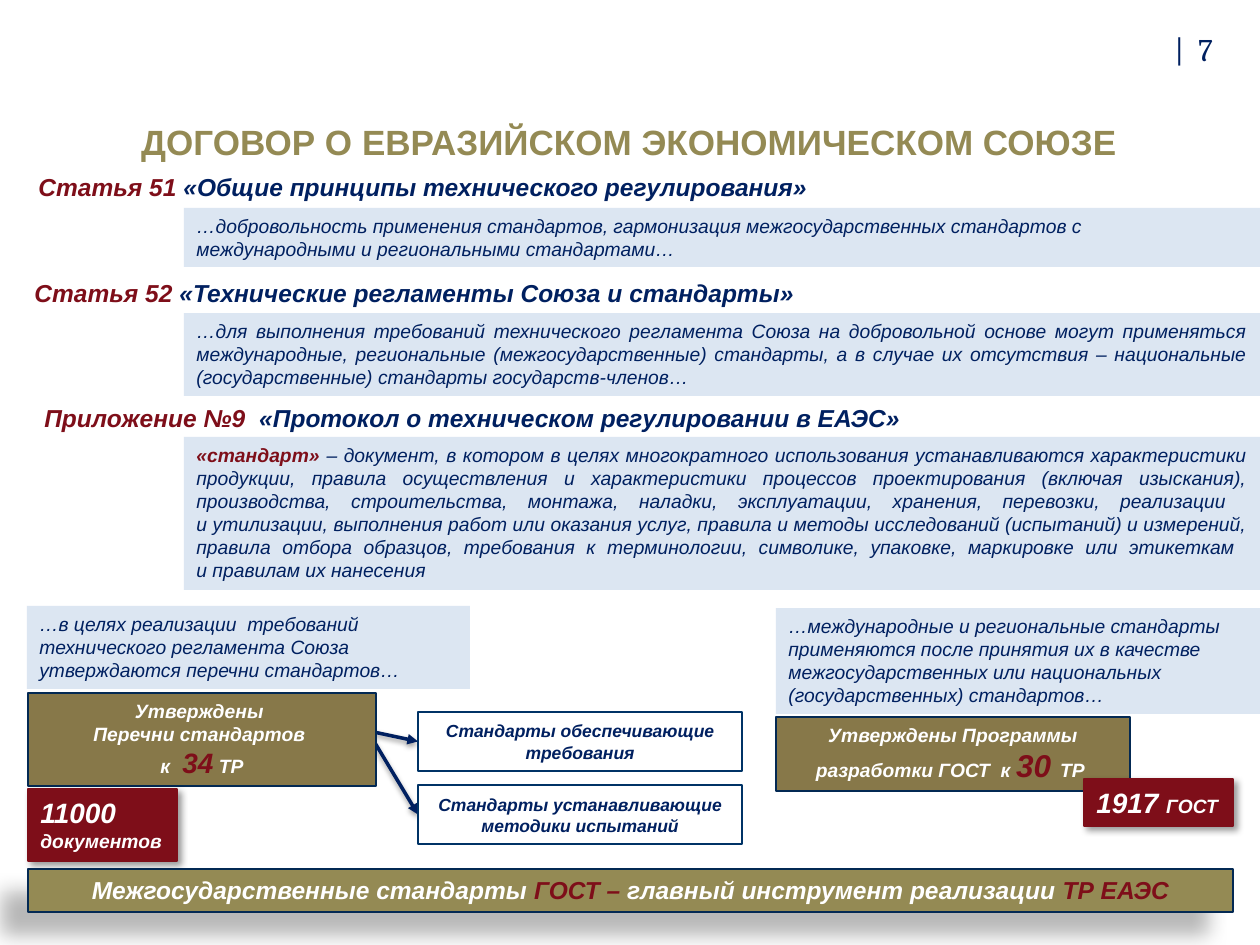
from typing import NamedTuple, Optional

from lxml.etree import SubElement
from pptx import Presentation
from pptx.dml.color import RGBColor
from pptx.enum.shapes import MSO_CONNECTOR, MSO_SHAPE
from pptx.enum.text import MSO_ANCHOR, MSO_AUTO_SIZE, PP_ALIGN
from pptx.oxml.ns import qn
from pptx.util import Pt

EMU_PER_INCH = 914400
PX_PER_INCH = 126
TITLE_ONLY = 5
LEFT_SIDE = 1
COLORS = {
    "navy": "002060",
    "wine": "7E0E19",
    "white": "FFFFFF",
    "pale": "DCE6F2",
    "olive": "877849",
    "khaki": "948A54",
    "edge": "032953",
    "frame": "003366",
    "black": "000000",
}


class Run(NamedTuple):
    text: str
    size: int = 11
    color: str = "navy"
    bold: bool = False
    italic: bool = True
    font: str = "Arial"


class Shadow(NamedTuple):
    opacity: int
    blur: float
    distance: float
    angle: int


class Box(NamedTuple):
    left: int
    top: int
    width: int
    height: int
    runs: list[Run]
    fill: Optional[str] = None
    line: Optional[str] = None
    line_width: float = 0.75
    align: PP_ALIGN = PP_ALIGN.LEFT
    anchor: MSO_ANCHOR = MSO_ANCHOR.TOP
    shadow: Optional[Shadow] = None


def px(value: int) -> int:
    return round(value * EMU_PER_INCH / PX_PER_INCH)


def rgb(name: str) -> RGBColor:
    return RGBColor.from_string(COLORS[name])


def add_shadow(shape, shadow: Shadow) -> None:
    properties = shape._element.spPr
    effects = properties.find(qn("a:effectLst"))
    if effects is None:
        effects = SubElement(properties, qn("a:effectLst"))
    outer = SubElement(
        effects, qn("a:outerShdw"), blurRad=str(Pt(shadow.blur)), dist=str(Pt(shadow.distance)),
        dir=str(shadow.angle * 60000), algn="tl", rotWithShape="0")
    color = SubElement(outer, qn("a:srgbClr"), val=COLORS["black"])
    SubElement(color, qn("a:alpha"), val=str(shadow.opacity * 1000))


def write_text(shape, box: Box) -> None:
    """Fill the shape with one paragraph; a newline in a run becomes a line break."""
    frame = shape.text_frame
    frame.word_wrap = True
    frame.auto_size = MSO_AUTO_SIZE.NONE
    frame.vertical_anchor = box.anchor
    paragraph = frame.paragraphs[0]
    paragraph.alignment = box.align
    for part in box.runs:
        for index, text in enumerate(part.text.split("\n")):
            if index:
                paragraph.add_line_break()
            run = paragraph.add_run()
            run.text = text
            font = run.font
            font.name, font.size = part.font, Pt(part.size)
            font.bold, font.italic = part.bold, part.italic
            font.color.rgb = rgb(part.color)


def add_box(slide, box: Box):
    bounds = [px(value) for value in box[:4]]
    if box.fill is None:
        shape = slide.shapes.add_textbox(*bounds)
    else:
        shape = slide.shapes.add_shape(MSO_SHAPE.RECTANGLE, *bounds)
        shape.shadow.inherit = False
        shape.fill.solid()
        shape.fill.fore_color.rgb = rgb(box.fill)
        if box.line is None:
            shape.line.fill.background()
        else:
            shape.line.color.rgb = rgb(box.line)
            shape.line.width = Pt(box.line_width)
        if box.shadow:
            add_shadow(shape, box.shadow)
    write_text(shape, box)
    return shape


def add_arrow(slide, start: tuple[int, int], end: tuple[int, int]):
    arrow = slide.shapes.add_connector(
        MSO_CONNECTOR.STRAIGHT, *[px(value) for value in start + end])
    arrow.line.color.rgb = rgb("navy")
    arrow.line.width = Pt(2)
    SubElement(arrow.line._get_or_add_ln(), qn("a:tailEnd"), type="triangle")
    add_shadow(arrow, Shadow(38, 3.1, 1.6, 90))
    return arrow


def heading(left: int, top: int, label: str, name: str) -> Box:
    return Box(left, top, 1172, 42, [Run(label, 14, "wine", True), Run(name, 14, bold=True)])


def quote(left: int, top: int, width: int, height: int, runs: list[Run],
          align: PP_ALIGN = PP_ALIGN.LEFT) -> Box:
    return Box(left, top, width, height, runs, "pale", align=align)


def approval(left: int, top: int, width: int, height: int, runs: list[Run],
             anchor: MSO_ANCHOR = MSO_ANCHOR.TOP) -> Box:
    return Box(left, top, width, height, runs, "olive", "edge",
               align=PP_ALIGN.CENTER, anchor=anchor)


def counter(left: int, top: int, height: int, number: str, unit: str) -> Box:
    return Box(left, top, 149, height,
               [Run(number, 16, "white", True), Run(unit, 11, "white", True)],
               "wine", "wine", shadow=Shadow(40, 4, 3, 45))


QUOTE_LEFT, QUOTE_WIDTH = 184, 1076
TITLE = Box(26, 103, 1206, 77,
            [Run("ДОГОВОР О ЕВРАЗИЙСКОМ ЭКОНОМИЧЕСКОМ СОЮЗЕ", 20, "khaki", True, False)],
            align=PP_ALIGN.CENTER, anchor=MSO_ANCHOR.MIDDLE)
BOXES = [
    Box(1162, 24, 84, 53, [Run("|  7", 18, italic=False, font="Cambria")]),
    heading(26, 166, "Статья 51 ", "«Общие принципы технического регулирования»"),
    quote(QUOTE_LEFT, 208, QUOTE_WIDTH, 59, [Run(
        "…добровольность применения стандартов, гармонизация межгосударственных "
        "стандартов с международными и региональными стандартами…")]),
    heading(22, 272, "Статья 52 ", "«Технические регламенты Союза и стандарты»"),
    quote(QUOTE_LEFT, 313, QUOTE_WIDTH, 83, [Run(
        "…для выполнения требований технического регламента Союза на добровольной основе "
        "могут применяться международные, региональные (межгосударственные) стандарты, "
        "а в случае их отсутствия – национальные (государственные) стандарты "
        "государств-членов…")], PP_ALIGN.JUSTIFY),
    heading(32, 397, "Приложение №9  ", "«Протокол о техническом регулировании в ЕАЭС»"),
    quote(QUOTE_LEFT, 437, QUOTE_WIDTH, 153, [Run("«стандарт» ", 11, "wine", True), Run(
        "– документ, в котором в целях многократного использования устанавливаются "
        "характеристики продукции, правила осуществления и характеристики процессов "
        "проектирования (включая изыскания), производства, строительства, монтажа, наладки, "
        "эксплуатации, хранения, перевозки, реализации \nи утилизации, выполнения работ или "
        "оказания услуг, правила и методы исследований (испытаний) и измерений, правила отбора "
        "образцов, требования к терминологии, символике, упаковке, маркировке или этикеткам \n"
        "и правилам их нанесения")], PP_ALIGN.JUSTIFY),
    quote(27, 606, 443, 83, [Run(
        "…в целях реализации  требований технического регламента Союза "
        "утверждаются перечни стандартов…")]),
    quote(776, 608, 484, 106, [Run(
        "…международные и региональные стандарты применяются после принятия их в качестве "
        "межгосударственных или национальных (государственных) стандартов…")]),
    approval(28, 693, 348, 93, [
        Run("Утверждены \nПеречни стандартов \nк ", 11, "white", True),
        Run(" ", 14, "wine", True), Run("34", 16, "wine", True),
        Run(" ТР", 11, "white", True)], MSO_ANCHOR.MIDDLE),
    approval(776, 717, 354, 74, [
        Run("Утверждены Программы\nразработки ГОСТ  к ", 11, "white", True),
        Run("30 ", 18, "wine", True), Run("ТР ", 11, "white", True)]),
    counter(28, 789, 72, "11000 ", "документов"),
    counter(1084, 779, 47, "1917 ", "ГОСТ"),
    Box(28, 869, 1205, 43, [
        Run("Межгосударственные стандарты ", 14, "white", True),
        Run("ГОСТ – ", 14, "wine", True),
        Run("главный инструмент реализации ", 14, "white", True),
        Run("ТР ЕАЭС", 14, "wine", True)], "khaki", "edge",
        align=PP_ALIGN.CENTER, shadow=Shadow(28, 11.8, 19.7, 141)),
]
STANDARD_KINDS = ["Стандарты обеспечивающие требования", "Стандарты устанавливающие методики испытаний"]
ARROW_STARTS = [(369, 731), (369, 733)]


def main() -> None:
    presentation = Presentation()
    presentation.slide_width, presentation.slide_height = px(1260), px(945)
    slide = presentation.slides.add_slide(presentation.slide_layouts[TITLE_ONLY])
    title = slide.shapes.title
    title.left, title.top, title.width, title.height = [px(value) for value in TITLE[:4]]
    write_text(title, TITLE)

    kinds = [Box(418, 712 + 73 * row, 324, 59, [Run(text, 10, bold=True)], "white", "frame", 1.5,
                 PP_ALIGN.CENTER, MSO_ANCHOR.MIDDLE) for row, text in enumerate(STANDARD_KINDS)]
    arrows = [add_arrow(slide, start, (kind.left, kind.top + kind.height // 2))
              for start, kind in zip(ARROW_STARTS, kinds)]
    for box in BOXES:
        add_box(slide, box)
    for arrow, kind in zip(arrows, kinds):
        arrow.end_connect(add_box(slide, kind), LEFT_SIDE)
    presentation.save("out.pptx")


if __name__ == "__main__":
    main()
